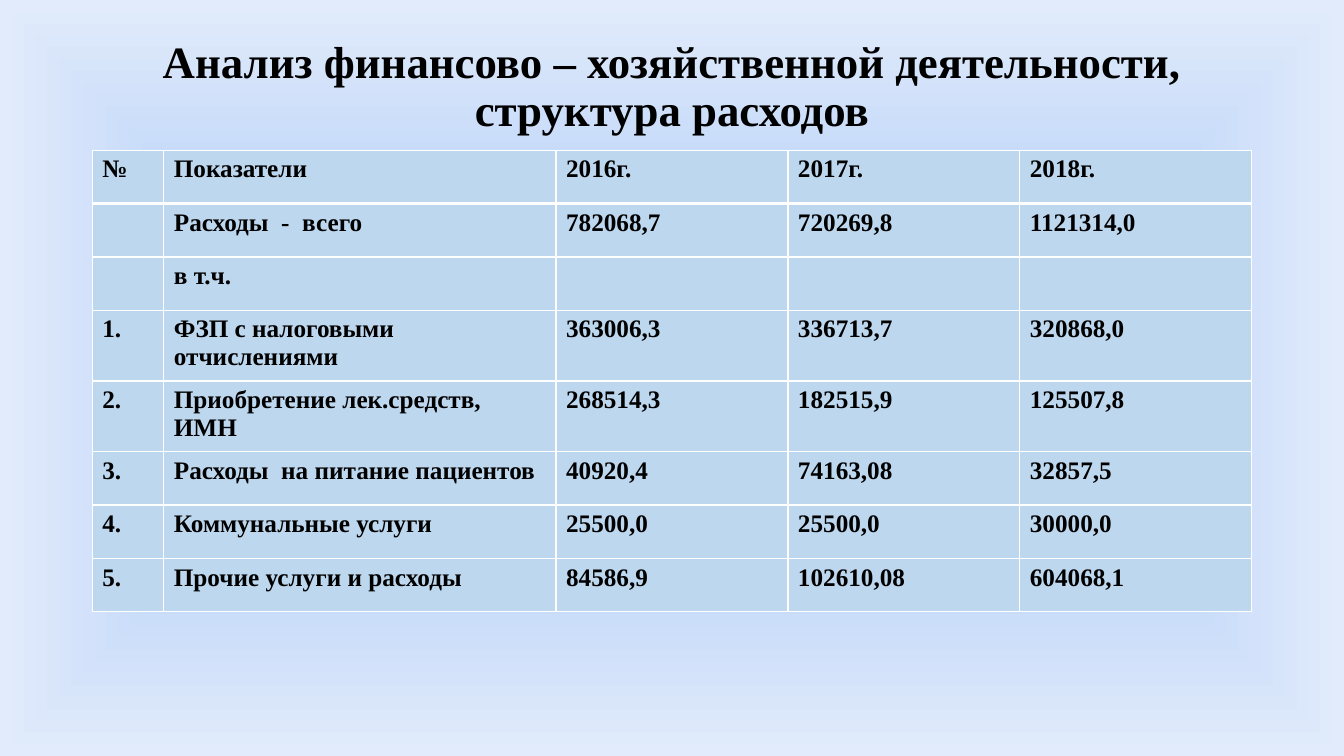
from lxml import etree
from pptx import Presentation
from pptx.dml.color import RGBColor
from pptx.enum.text import MSO_ANCHOR as Anchor, PP_ALIGN as Align
from pptx.oxml import parse_xml
from pptx.oxml.ns import nsdecls, qn
from pptx.util import Inches, Pt

# Content
TITLE = "Анализ финансово – хозяйственной деятельности, структура расходов"
ROWS = [
    ("№", "Показатели", "2016г.", "2017г.", "2018г."),
    ("", "Расходы  -  всего", "782068,7", "720269,8", "1121314,0"),
    ("", "в т.ч.", "", "", ""),
    ("1.", "ФЗП с налоговыми отчислениями", "363006,3", "336713,7", "320868,0"),
    ("2.", "Приобретение лек.средств, ИМН", "268514,3", "182515,9", "125507,8"),
    ("3.", "Расходы  на питание пациентов", "40920,4", "74163,08", "32857,5"),
    ("4.", "Коммунальные услуги", "25500,0", "25500,0", "30000,0"),
    ("5.", "Прочие услуги и расходы", "84586,9", "102610,08", "604068,1"),
]

# Layout and style
WIDTH, HEIGHT = 13.33, 7.5
CONTENT_WIDTH = 11.5
LEFT = (WIDTH - CONTENT_WIDTH) / 2
TITLE_TOP, TITLE_HEIGHT = 0.4, 0.95
TABLE_TOP, ROW_HEIGHT = 1.49, 0.53
COLUMNS = [0.71, 3.89] + [2.3] * 3
FONT, TEXT, CELL, BORDER = "Times New Roman", "000000", "BDD7EE", "FFFFFF"
GRADIENT = [(0, "9AC3F5"), (50, "C2D8F8"), (100, "E1EBFB")]


def color(value):
    return RGBColor.from_string(value)


def write(frame, text, size=18, align=Align.LEFT, spacing=None):
    frame.word_wrap = True
    paragraph = frame.paragraphs[0]
    paragraph.alignment = align
    paragraph.line_spacing = spacing
    paragraph.font.size = Pt(size)
    if text:
        run = paragraph.add_run()
        run.text = text
        run.font.name, run.font.size, run.font.bold = FONT, Pt(size), True
        run.font.color.rgb = color(TEXT)


def set_background(slide):
    stops = "".join(f'<a:gs pos="{share * 1000}"><a:srgbClr val="{value}"/></a:gs>'
                    for share, value in GRADIENT)
    slide.element.cSld.insert(0, parse_xml(
        f'<p:bg {nsdecls("p", "a")}><p:bgPr><a:gradFill rotWithShape="1">'
        f'<a:gsLst>{stops}</a:gsLst><a:path path="shape">'
        '<a:fillToRect l="50000" t="50000" r="50000" b="50000"/></a:path>'
        '</a:gradFill><a:effectLst/></p:bgPr></p:bg>'))


def set_borders(cell, widths):
    properties = cell._tc.get_or_add_tcPr()
    for position, (side, width) in enumerate(widths.items()):
        line = etree.Element(qn(f"a:ln{side}"), w=str(Pt(width)))
        fill = etree.SubElement(line, qn("a:solidFill"))
        etree.SubElement(fill, qn("a:srgbClr"), val=BORDER)
        properties.insert(position, line)


presentation = Presentation()
presentation.slide_width, presentation.slide_height = Inches(WIDTH), Inches(HEIGHT)
slide = presentation.slides.add_slide(presentation.slide_layouts[6])
set_background(slide)

# Title
title = slide.shapes.add_textbox(Inches(LEFT), Inches(TITLE_TOP),
                                 Inches(CONTENT_WIDTH), Inches(TITLE_HEIGHT))
title.text_frame.vertical_anchor = Anchor.MIDDLE
write(title.text_frame, TITLE, size=32, align=Align.CENTER, spacing=0.9)

# Expense table
table = slide.shapes.add_table(
    len(ROWS), len(COLUMNS), Inches(LEFT), Inches(TABLE_TOP),
    Inches(CONTENT_WIDTH), Inches(ROW_HEIGHT * len(ROWS))).table
for column, width in zip(table.columns, COLUMNS):
    column.width = Inches(width)
for row_index, (row, texts) in enumerate(zip(table.rows, ROWS)):
    row.height = Inches(ROW_HEIGHT)
    top = 3 if row_index == 1 else 1
    bottom = 3 if row_index == 0 else 1
    for cell, text in zip(row.cells, texts):
        cell.fill.solid()
        cell.fill.fore_color.rgb = color(CELL)
        set_borders(cell, {"L": 1, "R": 1, "T": top, "B": bottom})
        write(cell.text_frame, text)

presentation.save("out.pptx")
